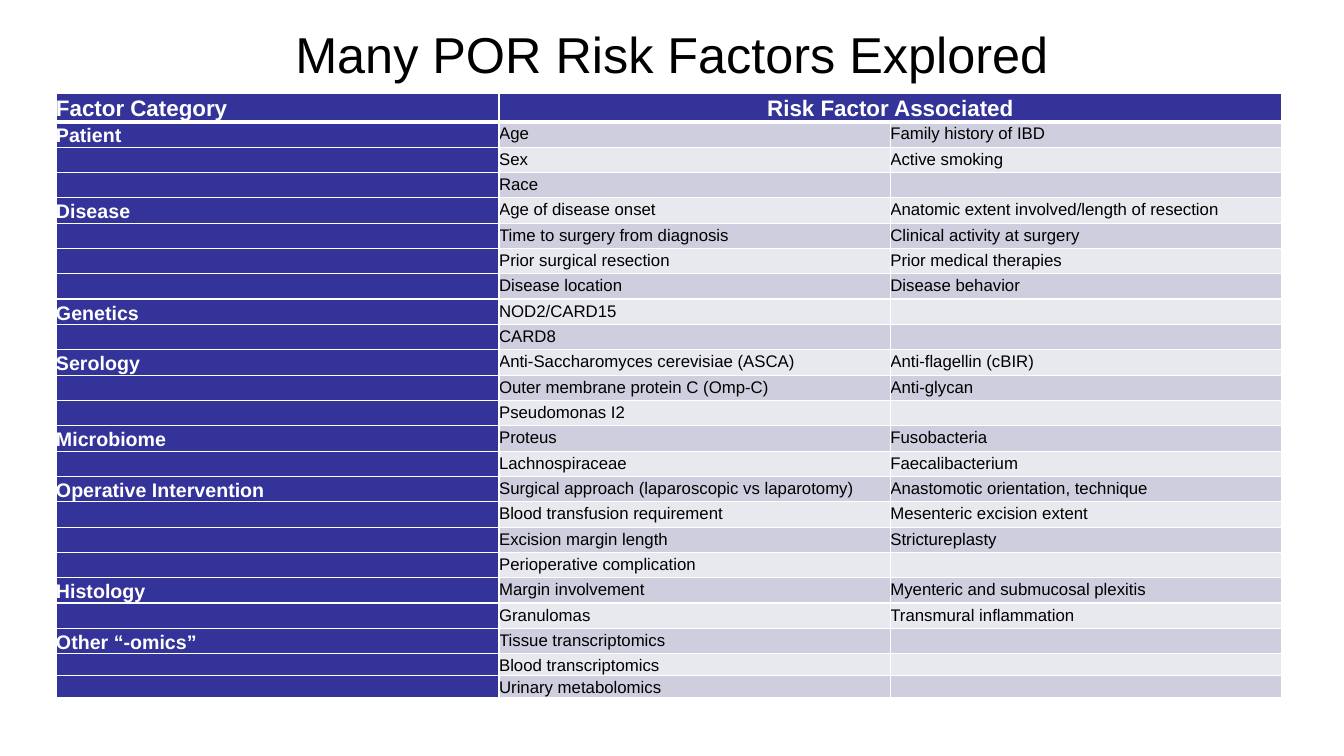
from dataclasses import dataclass

from lxml import etree
from pptx import Presentation
from pptx.dml.color import RGBColor
from pptx.enum.text import MSO_ANCHOR, MSO_AUTO_SIZE, PP_ALIGN
from pptx.oxml.ns import qn
from pptx.util import Pt

CENTER, JUSTIFY = PP_ALIGN.CENTER, PP_ALIGN.JUSTIFY
TOP = MSO_ANCHOR.TOP
NO_FIT = MSO_AUTO_SIZE.NONE
TITLE_ONLY = 5


@dataclass(frozen=True)
class Theme:
    font: str = "Arial"
    black: str = "000000"
    white: str = "FFFFFF"
    navy: str = "333399"
    bands: tuple = ("CECEDE", "E8E8EF")
    title_size: int = 36
    header_size: int = 16
    category_size: int = 14
    factor_size: int = 12


THEME = Theme()
COLUMN_WIDTHS = (316.5, 279.5, 279.5)
HEADER_HEIGHT, ROW_HEIGHT, LAST_HEIGHT = 20, 18.1, 15.4
SHORT_ROWS = 2

FACTORS = {
    "Patient": [
        ("Age", "Family history of IBD"),
        ("Sex", "Active smoking"),
        ("Race", ""),
    ],
    "Disease": [
        ("Age of disease onset", "Anatomic extent involved/length of resection"),
        ("Time to surgery from diagnosis", "Clinical activity at surgery"),
        ("Prior surgical resection", "Prior medical therapies"),
        ("Disease location", "Disease behavior"),
    ],
    "Genetics": [("NOD2/CARD15", ""), ("CARD8", "")],
    "Serology": [
        ("Anti-Saccharomyces cerevisiae (ASCA)", "Anti-flagellin (cBIR)"),
        ("Outer membrane protein C (Omp-C)", "Anti-glycan"),
        ("Pseudomonas I2", ""),
    ],
    "Microbiome": [
        ("Proteus", "Fusobacteria"),
        ("Lachnospiraceae", "Faecalibacterium"),
    ],
    "Operative Intervention": [
        ("Surgical approach (laparoscopic vs laparotomy)",
         "Anastomotic orientation, technique"),
        ("Blood transfusion requirement", "Mesenteric excision extent"),
        ("Excision margin length", "Strictureplasty"),
        ("Perioperative complication", ""),
    ],
    "Histology": [
        ("Margin involvement", "Myenteric and submucosal plexitis"),
        ("Granulomas", "Transmural inflammation"),
    ],
    "Other “-omics”": [
        ("Tissue transcriptomics", ""),
        ("Blood transcriptomics", ""),
        ("Urinary metabolomics", ""),
    ],
}


def write_text(frame, text, *, size, color, bold=False, align=JUSTIFY, spacing=1.15):
    para = frame.paragraphs[0]
    para.alignment = align
    para.line_spacing = spacing
    if not text:
        # An empty cell still takes its row height from this size.
        etree.SubElement(para._p, qn("a:endParaRPr"), sz=str(size * 100))
        return
    span = para.add_run()
    span.text = text
    span.font.name = THEME.font
    span.font.size = Pt(size)
    span.font.bold = bold
    span.font.color.rgb = RGBColor.from_string(color)


def set_borders(cell, bottom=1, top=1):
    """Draw white cell borders, placed before the fill as the schema requires."""
    properties = cell._tc.get_or_add_tcPr()
    widths = {"a:lnL": 1, "a:lnR": 1, "a:lnT": top, "a:lnB": bottom}
    for index, (tag, width) in enumerate(widths.items()):
        line = etree.Element(qn(tag), w=str(Pt(width)))
        fill = etree.SubElement(line, qn("a:solidFill"))
        etree.SubElement(fill, qn("a:srgbClr"), val=THEME.white)
        properties.insert(index, line)


def fill_cell(cell, text, fill, *, bottom=1, top=1, **text_format):
    cell.margin_left = cell.margin_right = cell.margin_top = cell.margin_bottom = 0
    cell.fill.solid()
    cell.fill.fore_color.rgb = RGBColor.from_string(fill)
    set_borders(cell, bottom, top)
    write_text(cell.text_frame, text, **text_format)


def add_title(page, text):
    title = page.shapes.title
    title.left, title.top, title.width, title.height = 0, Pt(18), Pt(960), Pt(104.4)
    frame = title.text_frame
    frame.word_wrap = True
    frame.auto_size = NO_FIT
    frame.vertical_anchor = TOP
    write_text(frame, text, size=THEME.title_size, color=THEME.black,
               align=CENTER, spacing=0.9)


def add_factor_table(page):
    rows = [
        (category if index == 0 else "", *pair)
        for category, pairs in FACTORS.items()
        for index, pair in enumerate(pairs)
    ]
    long_rows = len(rows) - SHORT_ROWS
    heights = [HEADER_HEIGHT] + [ROW_HEIGHT] * long_rows + [LAST_HEIGHT] * SHORT_ROWS
    table = page.shapes.add_table(
        len(heights), len(COLUMN_WIDTHS), Pt(40), Pt(66.5),
        Pt(sum(COLUMN_WIDTHS)), Pt(sum(heights))).table
    for column, width in zip(table.columns, COLUMN_WIDTHS):
        column.width = Pt(width)
    for row, height in zip(table.rows, heights):
        row.height = Pt(height)

    headers = (("Factor Category", JUSTIFY), ("Risk Factor Associated", CENTER),
               ("", CENTER))
    for column, (text, align) in enumerate(headers):
        fill_cell(table.cell(0, column), text, THEME.navy, bottom=3, align=align,
                  size=THEME.header_size, color=THEME.white, bold=True)
    table.cell(0, 1).merge(table.cell(0, 2))

    for index, (category, *factors) in enumerate(rows):
        top = 3 if index == 0 else 1
        category_size = THEME.category_size if category else THEME.factor_size
        fill_cell(table.cell(index + 1, 0), category, THEME.navy, top=top,
                  size=category_size, color=THEME.white, bold=True)
        for column, factor in enumerate(factors, start=1):
            fill_cell(table.cell(index + 1, column), factor, THEME.bands[index % 2],
                      top=top, size=THEME.factor_size, color=THEME.black)


def main():
    deck = Presentation()
    deck.slide_width, deck.slide_height = Pt(960), Pt(540)
    page = deck.slides.add_slide(deck.slide_layouts[TITLE_ONLY])
    add_title(page, "Many POR Risk Factors Explored")
    add_factor_table(page)
    deck.save("out.pptx")


if __name__ == "__main__":
    main()
